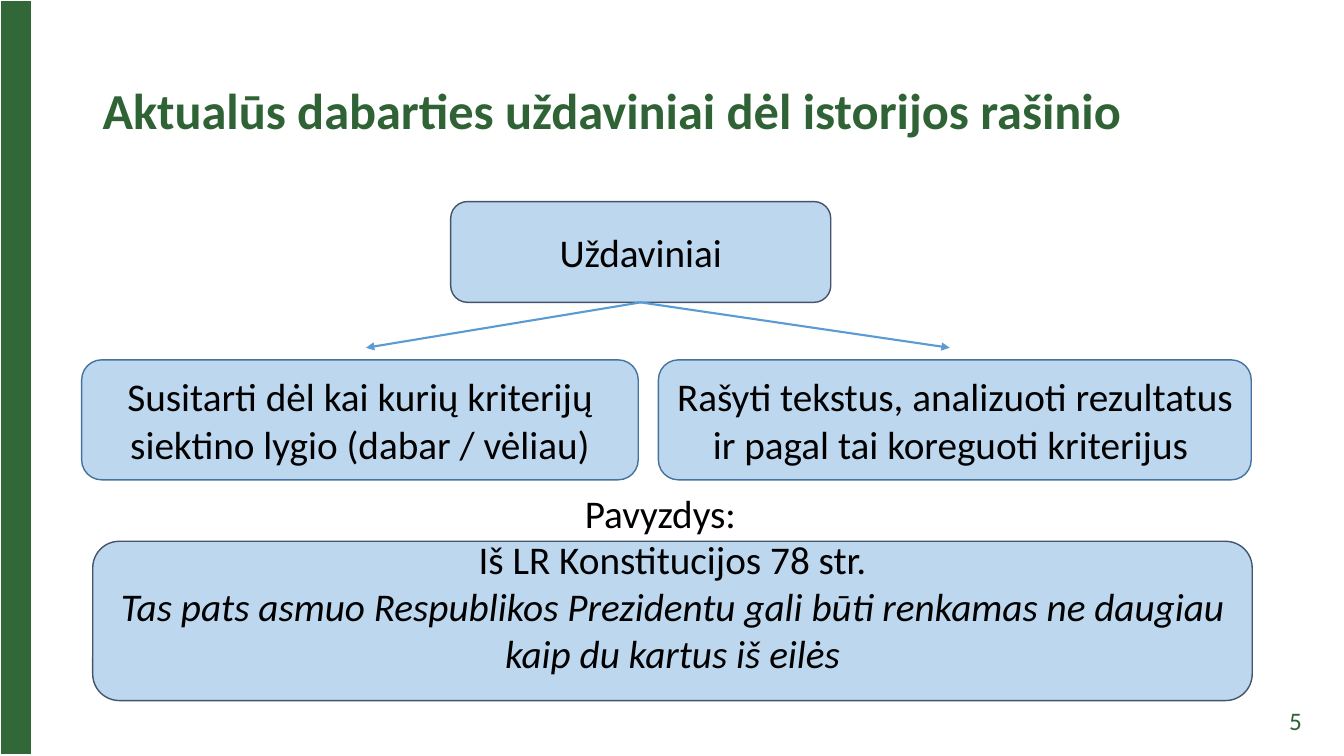
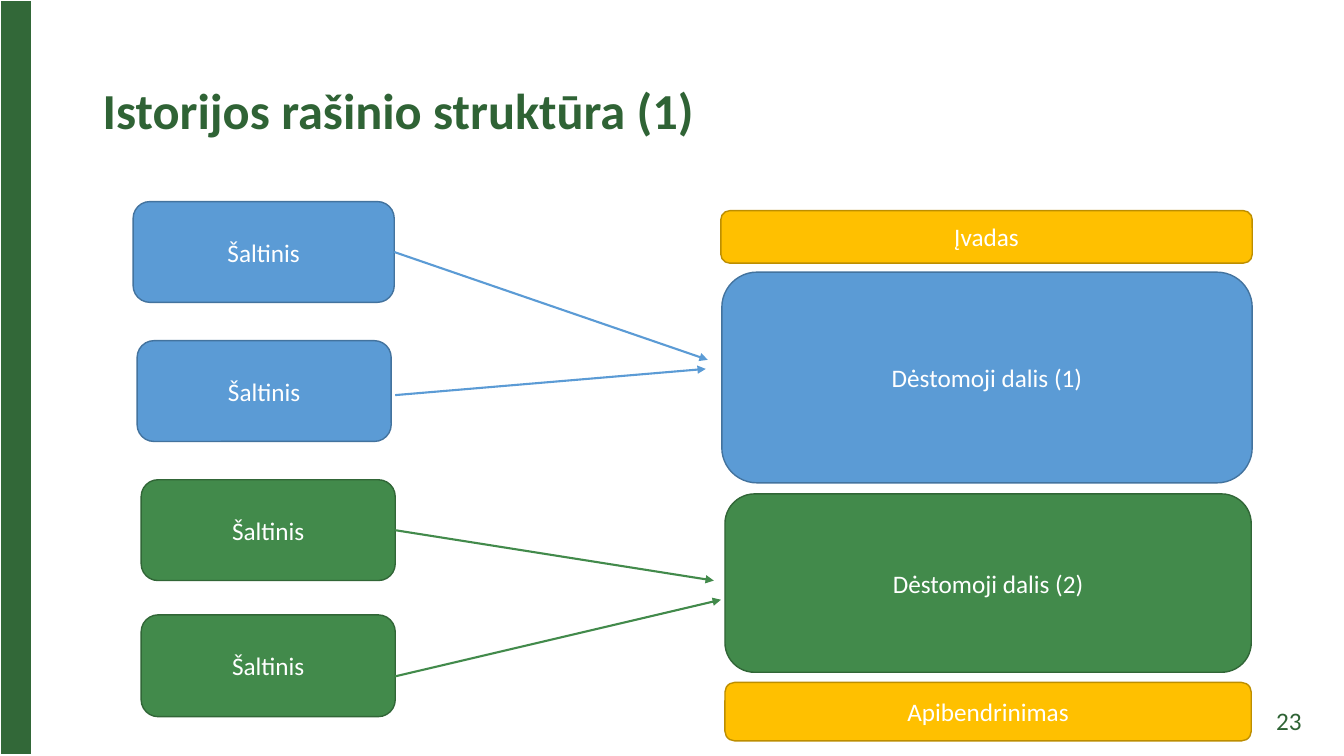
from lxml.etree import SubElement
from pptx import Presentation
from pptx.dml.color import RGBColor
from pptx.enum.shapes import MSO_CONNECTOR, MSO_SHAPE
from pptx.enum.text import MSO_ANCHOR, PP_ALIGN
from pptx.oxml.ns import qn
from pptx.util import Inches, Pt

FONT = "Calibri"
BAND, TITLE = "326838", "2F6335"
WHITE, BLACK = "FFFFFF", "000000"
PALE, SLATE = "BDD7EE", "44546A"
BLUE, BLUE_EDGE = "5B9BD5", "43739E"
GREEN, GREEN_EDGE = "428A4B", "316637"
GOLD, GOLD_EDGE = "FFC000", "BD8E00"
BOTTOM, RIGHT = 2, 3  # connection sites

hex_color = RGBColor.from_string


def add_block(slide, place, lines, size, color, fill=None, edge=None,
              align=PP_ALIGN.CENTER, bold=False):
    """Add a rounded box, or plain text when there is no fill."""
    place = [Inches(length) for length in place]
    if fill:
        block = slide.shapes.add_shape(MSO_SHAPE.ROUNDED_RECTANGLE, *place)
        block.shadow.inherit = False
        block.fill.solid()
        block.fill.fore_color.rgb = hex_color(fill)
        block.line.color.rgb = hex_color(edge)
        block.line.width = Pt(1)
    else:
        block = slide.shapes.add_textbox(*place)
    frame = block.text_frame
    frame.word_wrap = True
    frame.vertical_anchor = MSO_ANCHOR.MIDDLE
    for i, line in enumerate(lines):
        paragraph = frame.add_paragraph() if i else frame.paragraphs[0]
        paragraph.alignment = align
        run = paragraph.add_run()
        run.text = line
        run.font.name = FONT
        run.font.size = Pt(size)
        run.font.bold = bold
        run.font.color.rgb = hex_color(color)
    return block


def add_arrow(slide, source, site, end, color, start=None):
    """Draw an arrow from a free start, or else from a side of the source box."""
    points = [Inches(length) for length in (*(start or end), *end)]
    arrow = slide.shapes.add_connector(MSO_CONNECTOR.STRAIGHT, *points)
    if start is None:
        arrow.begin_connect(source, site)
    arrow.line.color.rgb = hex_color(color)
    arrow.line.width = Pt(1.5)
    SubElement(arrow.line._get_or_add_ln(), qn("a:tailEnd"), type="triangle")
    SubElement(arrow._element.spPr, qn("a:effectLst"))


prs = Presentation()
prs.slide_width, prs.slide_height = Inches(13.33), Inches(7.5)

# Shared frame: side band, title, slide number
slides = []
for title, number in [
    ("Aktualūs dabarties uždaviniai dėl istorijos rašinio", "5"),
    ("Istorijos rašinio struktūra (1)", "23"),
]:
    slide = prs.slides.add_slide(prs.slide_layouts[6])
    band = slide.shapes.add_table(1, 1, 0, 0, Inches(0.31), prs.slide_height).table
    band.first_row = band.horz_banding = False
    band_cell = band.cell(0, 0)
    cell_properties = band_cell._tc.get_or_add_tcPr()
    for side, width in [("lnL", 1), ("lnR", 1), ("lnT", 1), ("lnB", 3)]:
        border = SubElement(cell_properties, qn(f"a:{side}"), w=str(Pt(width)))
        border_fill = SubElement(border, qn("a:solidFill"))
        SubElement(border_fill, qn("a:srgbClr"), val=WHITE)
    band_cell.fill.solid()
    band_cell.fill.fore_color.rgb = hex_color(BAND)

    heading = add_block(slide, (0.92, 0.4, 11.5, 1.45), [title], 36, TITLE,
                        align=PP_ALIGN.LEFT, bold=True)
    heading.text_frame.paragraphs[0].line_spacing = 0.9
    add_block(slide, (10.01, 6.95, 3, 0.4), [number], 18, TITLE, align=PP_ALIGN.RIGHT)
    slides.append(slide)
tasks_slide, structure_slide = slides

# Tasks: one root, two branches
tasks = add_block(tasks_slide, (4.47, 2, 3.77, 1), ["Uždaviniai"], 28, BLACK, PALE, SLATE)
for left, width, task, arrow_x in [
    (0.81, 5.52, "Susitarti dėl kai kurių kriterijų siektino lygio (dabar / vėliau)", 3.63),
    (6.53, 5.88, "Rašyti tekstus, analizuoti rezultatus ir pagal tai koreguoti kriterijus ", 9.42),
]:
    add_block(tasks_slide, (left, 3.57, width, 1.19), [task], 28, BLACK, PALE, BLUE_EDGE)
    add_arrow(tasks_slide, tasks, BOTTOM, (arrow_x, 3.45), BLUE)

# Tasks: example
example = add_block(tasks_slide, (0.92, 5.37, 11.5, 1.58), [
    "Iš LR Konstitucijos 78 str.",
    "Tas pats asmuo Respublikos Prezidentu gali būti renkamas ne daugiau kaip du kartus iš eilės",
], 28, BLACK, PALE, SLATE)
example.text_frame.margin_top = 0
example.text_frame.margin_bottom = Inches(0.3)
example.text_frame.paragraphs[1].runs[0].font.italic = True
add_block(tasks_slide, (5.3, 4.79, 2.5, 0.6), ["Pavyzdys:"], 28, BLACK)

# Structure: sources pointing at the essay parts
for place, start, arrow_end, fill, edge in [
    ((1.32, 2, 2.59, 1), None, (7.02, 3.57), BLUE, BLUE_EDGE),
    ((1.36, 3.38, 2.52, 1), (3.92, 3.92), (7, 3.66), BLUE, BLUE_EDGE),
    ((1.4, 4.76, 2.52, 1), None, (7.08, 5.76), GREEN, GREEN_EDGE),
    ((1.4, 6.1, 2.52, 1.01), (3.92, 6.71), (7.15, 5.95), GREEN, GREEN_EDGE),
]:
    source = add_block(structure_slide, place, ["Šaltinis"], 18, WHITE, fill, edge)
    add_arrow(structure_slide, source, RIGHT, arrow_end, fill, start)

# Structure: essay parts
for part, place, fill, edge in [
    ("Įvadas", (7.15, 2.09, 5.27, 0.52), GOLD, GOLD_EDGE),
    ("Dėstomoji dalis (1)", (7.16, 2.7, 5.26, 2.09), BLUE, BLUE_EDGE),
    ("Dėstomoji dalis (2)", (7.19, 4.9, 5.22, 1.77), GREEN, GREEN_EDGE),
    ("Apibendrinimas", (7.19, 6.77, 5.22, 0.58), GOLD, GOLD_EDGE),
]:
    add_block(structure_slide, place, [part], 18, WHITE, fill, edge)

prs.save("out.pptx")
